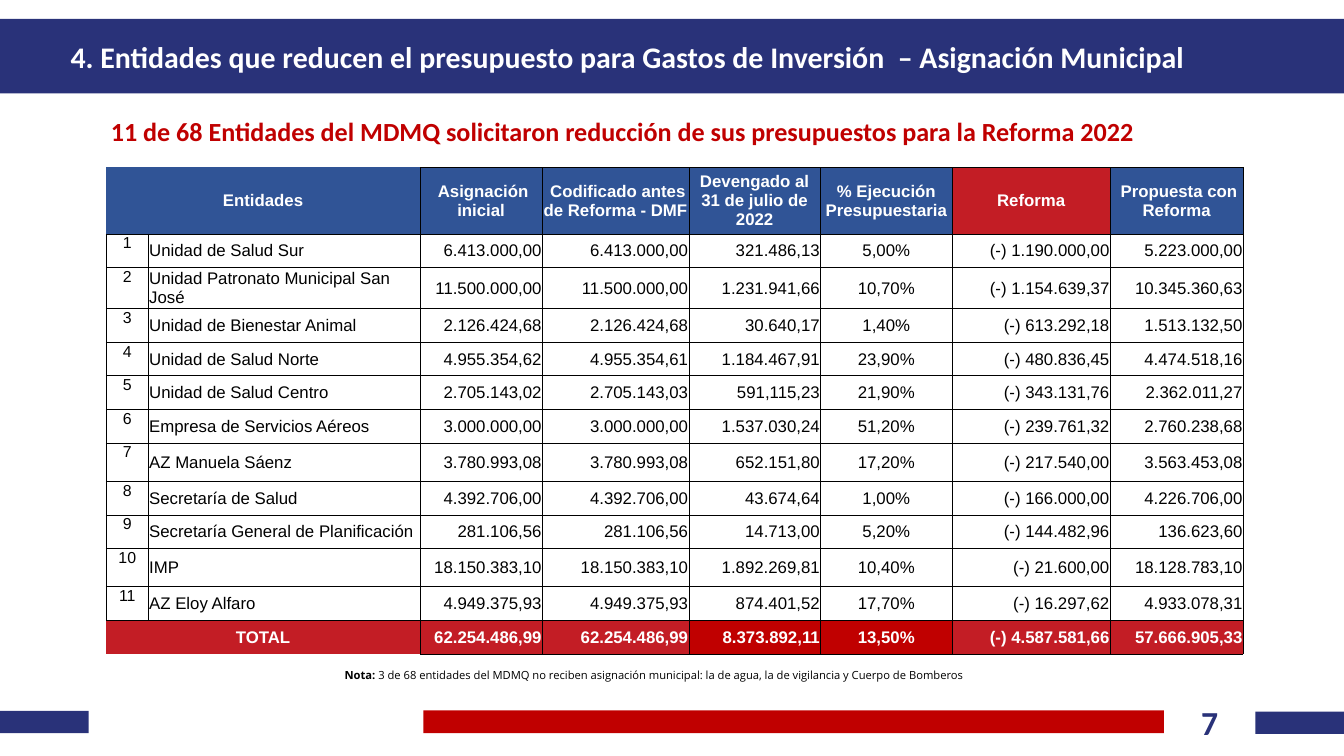
from typing import NamedTuple

from lxml.etree import SubElement
from pptx import Presentation
from pptx.dml.color import RGBColor
from pptx.enum.shapes import MSO_SHAPE as Preset
from pptx.enum.text import MSO_ANCHOR as Anchor, PP_ALIGN as Align
from pptx.oxml import parse_xml
from pptx.oxml.ns import nsdecls, qn
from pptx.util import Inches, Pt

# The slide is a grid of 20 columns by 11.25 rows, each one inch.
GRID_COLS, GRID_ROWS = 20, 11.25
COLOURS = {
    "navy": "293279", "blue": "305496", "red": "C31D25",
    "dark red": "C00000", "white": "FFFFFF", "black": "000000",
}


class Area(NamedTuple):
    col: float
    row: float
    cols: float
    rows: float

    def emu(self) -> tuple:
        return tuple(Inches(length) for length in self)


class Font(NamedTuple):
    name: str
    size: float
    colour: str
    bold: bool = False


class Bar(NamedTuple):
    area: Area
    colour: str


class Label(NamedTuple):
    area: Area
    runs: tuple
    align: Align = Align.LEFT
    anchor: Anchor = Anchor.TOP
    insets: tuple = (0.1, 0.05)


class Column(NamedTuple):
    heading: str
    width: float
    align: Align
    head_fill: str = "blue"
    total_fill: str = "red"


BARS = (
    Bar(Area(6.3, 10.57, 11.02, 0.34), "dark red"),
    Bar(Area(0, 10.58, 1.32, 0.33), "navy"),
    Bar(Area(18.68, 10.59, 1.32, 0.33), "navy"),
    Bar(Area(0, 0.28, GRID_COLS, 1.11), "navy"),
)

NOTE = Font("Open Sans", 12, "black")
LABELS = (
    Label(Area(17.32, 10.4, 1.36, 0.71),
          (("7", Font("Calibri", 36, "navy", True)),), Align.CENTER),
    Label(Area(0.87, 0.28, 17.76, 1.11),
          (("4. Entidades que reducen el presupuesto para Gastos de Inversión  – Asignación Municipal",
            Font("Calibri", 32, "white", True)),),
          anchor=Anchor.MIDDLE, insets=(0.18, 0.09)),
    Label(Area(1.47, 1.39, 18.2, 1.13),
          (("11 de 68 Entidades del MDMQ solicitaron reducción de sus presupuestos para la Reforma 2022",
            Font("Calibri", 28, "dark red", True)),),
          anchor=Anchor.MIDDLE, insets=(0.18, 0.09)),
    Label(Area(5.03, 9.89, 9.76, 0.3),
          (("Nota: ", NOTE._replace(bold=True)),
           ("3 de 68 entidades del MDMQ no reciben asignación municipal: "
            "la de agua, la de vigilancia y Cuerpo de Bomberos", NOTE)),
          Align.JUSTIFY),
)

COLUMNS = (
    Column("Entidades", 0.63, Align.CENTER),
    Column("", 4.04, Align.LEFT),
    Column(" Asignación inicial", 1.82, Align.RIGHT),
    Column(" Codificado antes de Reforma - DMF", 2.18, Align.RIGHT),
    Column("Devengado al 31 de julio de 2022", 1.96, Align.RIGHT, total_fill="dark red"),
    Column("% Ejecución Presupuestaria", 1.96, Align.CENTER, total_fill="dark red"),
    Column("Reforma", 2.35, Align.RIGHT, head_fill="red"),
    Column(" Propuesta con Reforma", 1.98, Align.RIGHT),
)
ENTITIES = (
    ("Unidad de Salud Sur", "6.413.000,00", "6.413.000,00", "321.486,13", "5,00%", "(-) 1.190.000,00", "5.223.000,00"),
    ("Unidad Patronato Municipal San José", "11.500.000,00", "11.500.000,00", "1.231.941,66", "10,70%",
     "(-) 1.154.639,37", "10.345.360,63"),
    ("Unidad de Bienestar Animal", "2.126.424,68", "2.126.424,68", "30.640,17", "1,40%",
     "(-) 613.292,18", "1.513.132,50"),
    ("Unidad de Salud Norte", "4.955.354,62", "4.955.354,61", "1.184.467,91", "23,90%",
     "(-) 480.836,45", "4.474.518,16"),
    ("Unidad de Salud Centro", "2.705.143,02", "2.705.143,03", "591,115,23", "21,90%",
     "(-) 343.131,76", "2.362.011,27"),
    ("Empresa de Servicios Aéreos", "3.000.000,00", "3.000.000,00", "1.537.030,24", "51,20%",
     "(-) 239.761,32", "2.760.238,68"),
    ("AZ Manuela Sáenz", "3.780.993,08", "3.780.993,08", "652.151,80", "17,20%", "(-) 217.540,00", "3.563.453,08"),
    ("Secretaría de Salud", "4.392.706,00", "4.392.706,00", "43.674,64", "1,00%", "(-) 166.000,00", "4.226.706,00"),
    ("Secretaría General de Planificación", "281.106,56", "281.106,56", "14.713,00", "5,20%",
     "(-) 144.482,96", "136.623,60"),
    ("IMP", "18.150.383,10", "18.150.383,10", "1.892.269,81", "10,40%", "(-) 21.600,00", "18.128.783,10"),
    ("AZ Eloy Alfaro", "4.949.375,93", "4.949.375,93", "874.401,52", "17,70%", "(-) 16.297,62", "4.933.078,31"),
)
TOTALS = ("TOTAL", "", "62.254.486,99", "62.254.486,99", "8.373.892,11", "13,50%",
          "(-) 4.587.581,66", "57.666.905,33")
TABLE_AREA = Area(1.58, 2.49, 16.92, 7.2)
HEAD_HEIGHT, ROW_HEIGHT, TALL_HEIGHT = 0.99, 0.5, 0.57
TALL_ROWS = (2, 7, 10)
BODY = Font("Arial", 18, "black")
NUMBER = BODY._replace(size=17)
STRONG = Font("Arial", 18, "white", True)


def rgb(colour: str) -> RGBColor:
    return RGBColor.from_string(COLOURS[colour])


def add_run(paragraph, text: str, font: Font) -> None:
    run = paragraph.add_run()
    run.text = text
    run.font.name, run.font.size, run.font.bold = font.name, Pt(font.size), font.bold
    run.font.color.rgb = rgb(font.colour)


def draw_bar(slide, bar: Bar) -> None:
    shape = slide.shapes.add_shape(Preset.RECTANGLE, *bar.area.emu())
    shape.shadow.inherit = False
    shape.fill.solid()
    shape.fill.fore_color.rgb = rgb(bar.colour)
    shape.line.fill.background()


def draw_label(slide, label: Label) -> None:
    frame = slide.shapes.add_textbox(*label.area.emu()).text_frame
    frame.word_wrap = True
    frame.vertical_anchor = label.anchor
    frame.margin_left = frame.margin_right = Inches(label.insets[0])
    frame.margin_top = frame.margin_bottom = Inches(label.insets[1])
    paragraph = frame.paragraphs[0]
    paragraph.alignment = label.align
    for text, font in label.runs:
        add_run(paragraph, text, font)


def set_borders(cell, sides: str) -> None:
    """Rule the given sides (letters of LRTB) in black and leave the others bare."""
    properties = cell._tc.get_or_add_tcPr()
    for place, side in enumerate("LRTB"):
        line = parse_xml(f'<a:ln{side} {nsdecls("a")} w="{Pt(0.5)}"/>')
        if side in sides:
            fill = SubElement(line, qn("a:solidFill"))
            SubElement(fill, qn("a:srgbClr"), val=COLOURS["black"])
        else:
            SubElement(line, qn("a:noFill"))
        properties.insert(place, line)


def fill_cell(cell, text: str, font: Font, align: Align, fill: str = "",
              anchor: Anchor = Anchor.MIDDLE, sides: str = "LRTB") -> None:
    cell.margin_left = cell.margin_right = cell.margin_top = Inches(0.01)
    cell.margin_bottom = 0
    cell.vertical_anchor = anchor
    if fill:
        cell.fill.solid()
        cell.fill.fore_color.rgb = rgb(fill)
    else:
        cell.fill.background()
    set_borders(cell, sides)
    paragraph = cell.text_frame.paragraphs[0]
    paragraph.alignment = align
    if text:
        add_run(paragraph, text, font)


def draw_table(slide) -> None:
    last = len(ENTITIES) + 1
    table = slide.shapes.add_table(last + 1, len(COLUMNS), *TABLE_AREA.emu()).table
    table.first_row = table.horz_banding = False
    for r, row in enumerate(table.rows):
        row.height = Inches(HEAD_HEIGHT if r == 0 else TALL_HEIGHT if r in TALL_ROWS else ROW_HEIGHT)
    for c, column in enumerate(COLUMNS):
        table.columns[c].width = Inches(column.width)
        merged = c < 2
        head_sides, total_sides = ("RB", "RT") if merged else ("LRTB", "LRTB")
        fill_cell(table.cell(0, c), column.heading, STRONG, Align.CENTER, column.head_fill, sides=head_sides)
        fill_cell(table.cell(last, c), TOTALS[c], STRONG, Align.CENTER if merged else column.align,
                  column.total_fill, sides=total_sides)
        for r, entity in enumerate(ENTITIES, 1):
            if c == 0:
                fill_cell(table.cell(r, c), str(r), NUMBER, column.align, anchor=Anchor.TOP)
            else:
                fill_cell(table.cell(r, c), entity[c - 1], BODY, column.align)
    for r in (0, last):
        table.cell(r, 0).merge(table.cell(r, 1))


def main() -> None:
    deck = Presentation()
    deck.slide_width, deck.slide_height = Inches(GRID_COLS), Inches(GRID_ROWS)
    slide = deck.slides.add_slide(deck.slide_layouts[6])
    for bar in BARS:
        draw_bar(slide, bar)
    for label in LABELS:
        draw_label(slide, label)
    draw_table(slide)
    deck.save("out.pptx")


if __name__ == "__main__":
    main()
